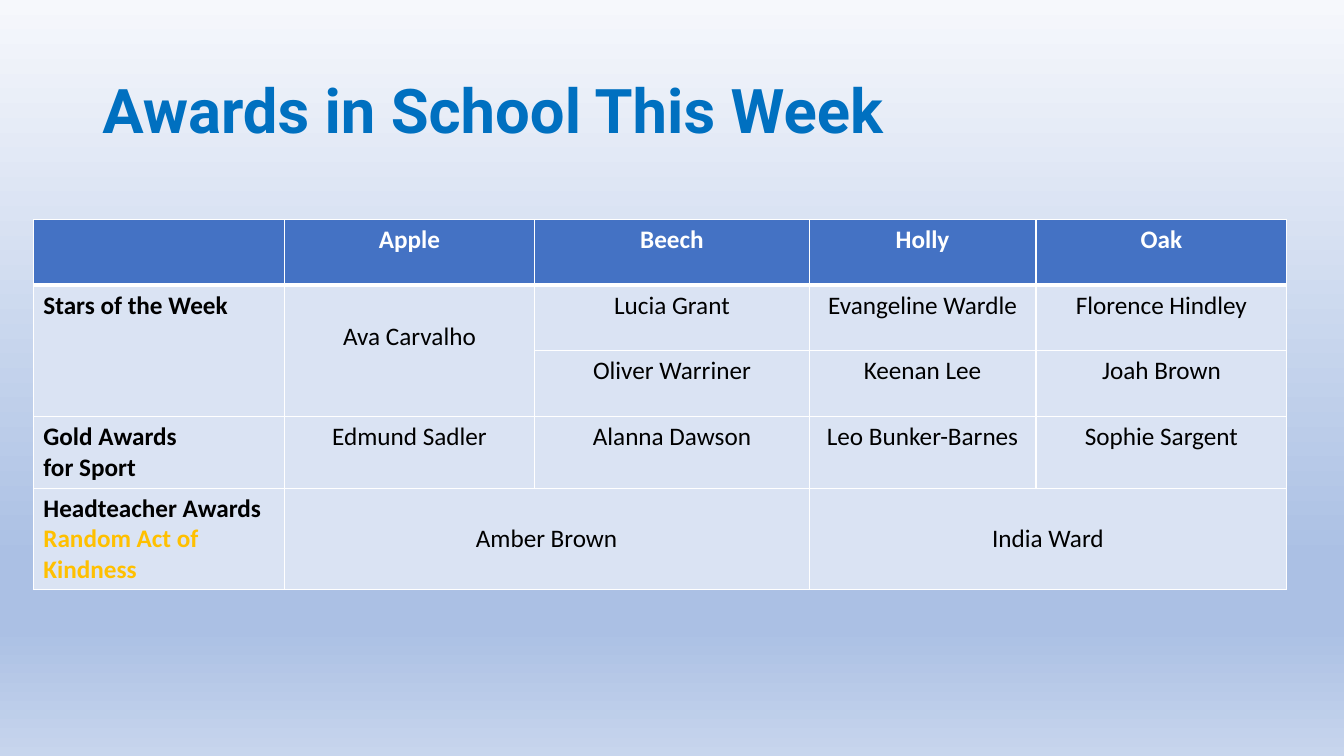
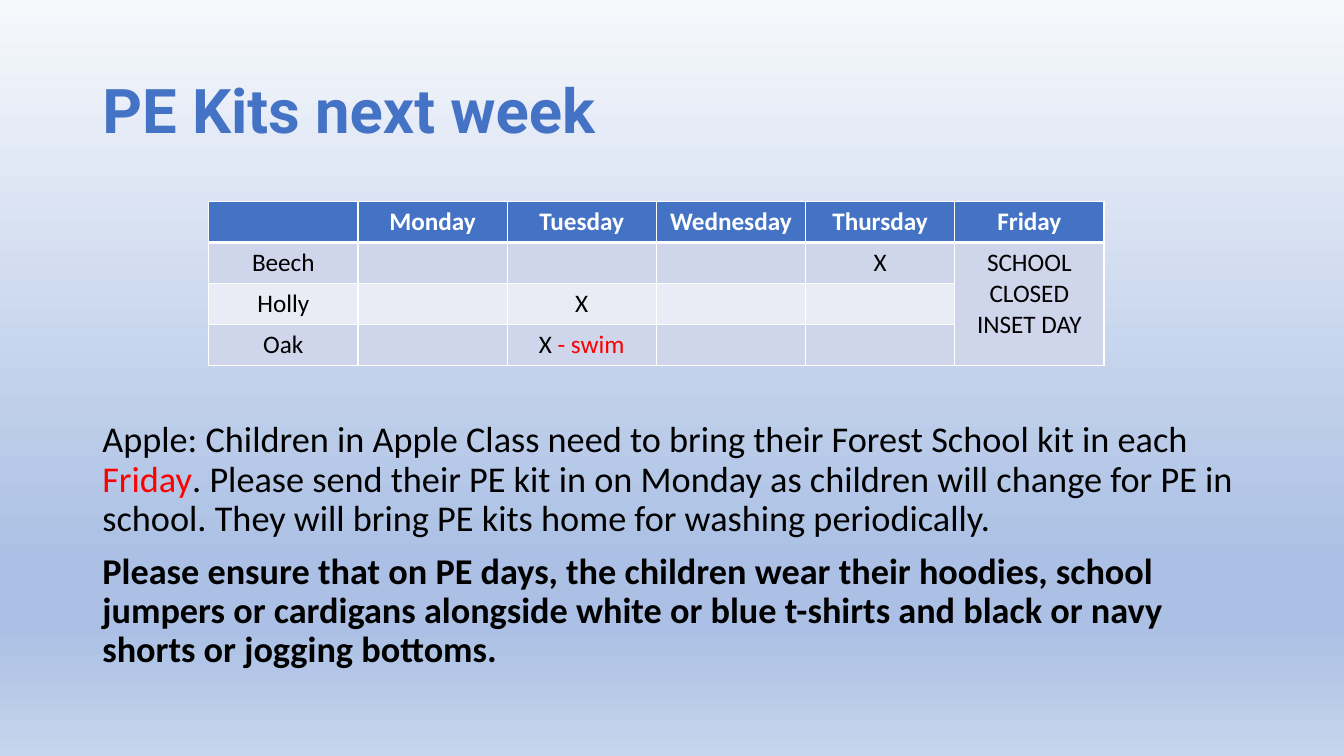
from lxml import etree
from pptx import Presentation
from pptx.dml.color import RGBColor
from pptx.enum.text import MSO_ANCHOR, PP_ALIGN
from pptx.oxml import parse_xml
from pptx.oxml.ns import qn
from pptx.util import Cm, Pt

LEFT, CENTER = PP_ALIGN.LEFT, PP_ALIGN.CENTER
TOP, MIDDLE = MSO_ANCHOR.TOP, MSO_ANCHOR.MIDDLE

WHITE = RGBColor(0xFF, 0xFF, 0xFF)
BLACK = RGBColor(0x00, 0x00, 0x00)
RED = RGBColor(0xFF, 0x00, 0x00)
GOLD = RGBColor(0xFF, 0xC0, 0x00)
SKY_BLUE = RGBColor(0x00, 0x70, 0xC0)
ROYAL_BLUE = RGBColor(0x44, 0x72, 0xC4)
PALE_BLUE = RGBColor(0xDA, 0xE3, 0xF3)
BAND_DARK = RGBColor(0xCF, 0xD5, 0xEA)
BAND_LIGHT = RGBColor(0xE9, 0xEB, 0xF5)
BACKGROUND_STOPS = [
    (0, RGBColor(0xF6, 0xF8, 0xFC)),
    (74, RGBColor(0xAB, 0xC0, 0xE4)),
    (83, RGBColor(0xAB, 0xC0, 0xE4)),
    (100, RGBColor(0xC7, 0xD5, 0xED)),
]

TITLE_FONT, BODY_FONT = "Roboto", "Calibri"
CONTENT_LEFT, CONTENT_WIDTH = Cm(2.33), Cm(29.21)

AWARDS = {
    "rows": [
        ["", "Apple", "Beech", "Holly", "Oak"],
        ["Stars of the Week", "Ava Carvalho", "Lucia Grant", "Evangeline Wardle", "Florence Hindley"],
        ["", "", "Oliver Warriner", "Keenan Lee", "Joah Brown"],
        ["Gold Awards\nfor Sport", "Edmund Sadler", "Alanna Dawson", "Leo Bunker-Barnes", "Sophie Sargent"],
        [[[("Headteacher Awards ", BLACK), ("Random Act of Kindness", GOLD)]],
         "Amber Brown", "", "India Ward", ""],
    ],
    "left": 0.84,
    "top": 5.54,
    "widths": [6.32, 6.32, 6.91, 5.72, 6.32],
    "heights": [1.65, 1.65, 1.65, 1.81, 2.56],
    "bands": [PALE_BLUE],
    "merges": [((1, 0), (2, 0)), ((1, 1), (2, 1)), ((4, 1), (4, 2)), ((4, 3), (4, 4))],
    "bold_labels": True,
}

PE_DAYS = {
    "rows": [
        ["", "Monday", "Tuesday", "Wednesday", "Thursday", "Friday"],
        ["Beech", "", "", "", "X", "SCHOOL CLOSED\nINSET DAY"],
        ["Holly", "", "X", "", "", ""],
        ["Oak", "", [[("X ", BLACK), ("- swim", RED)]], "", "", ""],
    ],
    "left": 5.26,
    "top": 5.08,
    "widths": [3.76] * 6,
    "heights": [1.03] * 4,
    "bands": [BAND_DARK, BAND_LIGHT],
    "merges": [((1, 5), (3, 5))],
    "bold_labels": False,
}

KIT_NOTES = [
    [
        ("Apple: Children in Apple Class need to bring their Forest School kit in each ", BLACK),
        ("Friday", RED),
        (". Please send their PE kit in on Monday as children will change for PE in school. "
         "They will bring PE kits home for washing periodically.", BLACK),
    ],
    "Please ensure that on PE days, the children wear their hoodies, school jumpers or cardigans "
    "alongside white or blue t-shirts and black or navy shorts or jogging bottoms.",
]


def set_background(master):
    master.background.fill.gradient()
    properties = master.background._cSld.bg.bgPr
    gradient = properties.find(qn("a:gradFill"))
    stops = gradient.find(qn("a:gsLst"))
    for stop in list(stops):
        stops.remove(stop)
    for position, color in BACKGROUND_STOPS:
        stop = etree.SubElement(stops, qn("a:gs"), pos=str(position * 1000))
        etree.SubElement(stop, qn("a:srgbClr"), val=str(color))
    for direction in gradient.findall(qn("a:lin")):
        gradient.remove(direction)
    stops.addnext(etree.Element(qn("a:lin"), ang="5400000", scaled="0"))


def write(text_frame, paragraphs, font, size, color, bold=False, alignment=LEFT):
    for index, content in enumerate(paragraphs):
        paragraph = text_frame.add_paragraph() if index else text_frame.paragraphs[0]
        paragraph.alignment = alignment
        paragraph.font.name = font
        paragraph.font.size = Pt(size)
        paragraph.font.bold = bold
        paragraph.font.color.rgb = color
        if isinstance(content, str):
            content = [(content, color)] if content else []
        for text, run_color in content:
            run = paragraph.add_run()
            run.text = text
            if run_color != color:
                run.font.color.rgb = run_color


def add_text(slide, top, height, paragraphs, anchor=TOP, **style):
    box = slide.shapes.add_textbox(CONTENT_LEFT, top, CONTENT_WIDTH, height)
    text_frame = box.text_frame
    text_frame.word_wrap = True
    text_frame.vertical_anchor = anchor
    write(text_frame, paragraphs, **style)
    for index, paragraph in enumerate(text_frame.paragraphs):
        paragraph.line_spacing = 0.9
        if index:
            paragraph.space_before = Pt(10)
    return text_frame


def add_titled_slide(presentation, title, color):
    slide = presentation.slides.add_slide(presentation.slide_layouts[6])
    add_text(slide, Cm(1.01), Cm(3.68), [title], anchor=MIDDLE,
             font=TITLE_FONT, size=44, color=color, bold=True)
    return slide


def set_borders(cell, widths):
    properties = cell._tc.get_or_add_tcPr()
    for side, width in widths.items():
        properties.append(parse_xml(
            f'<a:ln{side} xmlns:a="http://schemas.openxmlformats.org/drawingml/2006/main" '
            f'w="{Pt(width)}"><a:solidFill><a:srgbClr val="{WHITE}"/></a:solidFill></a:ln{side}>'))


def add_grid(slide, grid):
    rows, widths, heights = grid["rows"], grid["widths"], grid["heights"]
    table = slide.shapes.add_table(
        len(rows), len(widths), Cm(grid["left"]), Cm(grid["top"]),
        Cm(sum(widths)), Cm(sum(heights))).table
    for column, width in zip(table.columns, widths):
        column.width = Cm(width)
    for row, height in zip(table.rows, heights):
        row.height = Cm(height)
    for start, end in grid["merges"]:
        table.cell(*start).merge(table.cell(*end))
    for row_index, row in enumerate(rows):
        header = row_index == 0
        for column_index, content in enumerate(row):
            cell = table.cell(row_index, column_index)
            label = grid["bold_labels"] and column_index == 0
            set_borders(cell, {"L": 1, "R": 1, "T": 3 if row_index == 1 else 1, "B": 3 if header else 1})
            cell.fill.solid()
            cell.fill.fore_color.rgb = (
                ROYAL_BLUE if header else grid["bands"][(row_index - 1) % len(grid["bands"])])
            paragraphs = content.split("\n") if isinstance(content, str) else content
            write(cell.text_frame, paragraphs, BODY_FONT, 18, WHITE if header else BLACK,
                  bold=header or label, alignment=LEFT if label else CENTER)
    return table


def main():
    presentation = Presentation()
    presentation.slide_width, presentation.slide_height = Cm(33.87), Cm(19.05)
    set_background(presentation.slide_master)

    awards_slide = add_titled_slide(presentation, "Awards in School This Week", SKY_BLUE)
    awards_table = add_grid(awards_slide, AWARDS)
    awards_table.cell(1, 1).margin_top = Cm(0.9)
    for column in (1, 3):
        awards_table.cell(4, column).vertical_anchor = MIDDLE

    kit_slide = add_titled_slide(presentation, "PE Kits next week", ROYAL_BLUE)
    notes = add_text(kit_slide, Cm(10.5), Cm(6.65), KIT_NOTES,
                     font=BODY_FONT, size=25.9, color=BLACK)
    notes.paragraphs[1].font.bold = True
    add_grid(kit_slide, PE_DAYS)

    presentation.save("out.pptx")


if __name__ == "__main__":
    main()
